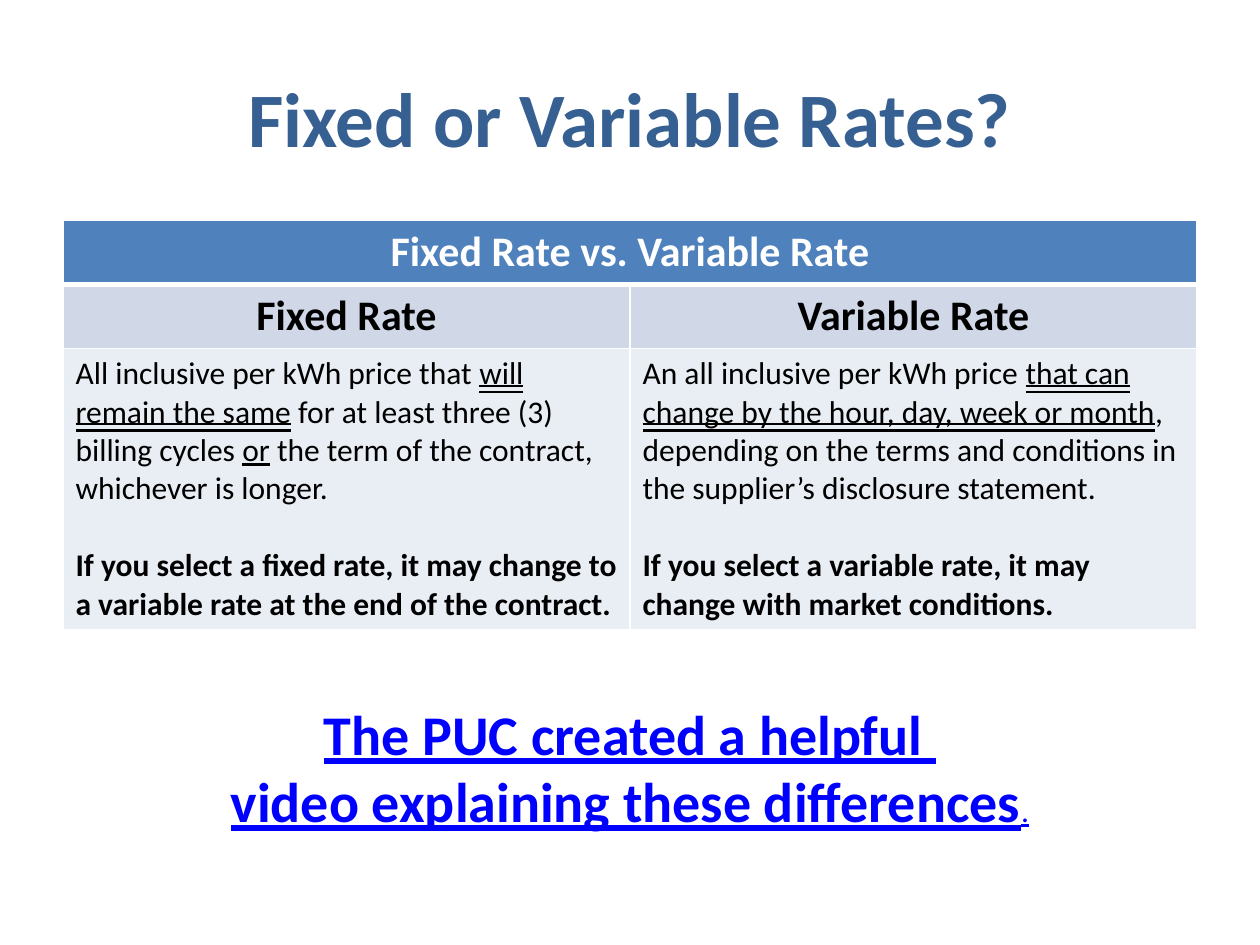
from dataclasses import dataclass

import lxml.etree
import pptx
import pptx.dml.color
import pptx.enum.text
import pptx.oxml.ns
import pptx.util

ALIGN = pptx.enum.text.PP_ALIGN
ANCHOR = pptx.enum.text.MSO_ANCHOR
UNDERLINE = pptx.enum.text.MSO_UNDERLINE

SLIDE_WIDTH, SLIDE_HEIGHT = 10, 7.5
MARGIN = 0.05  # share of the slide width
CONTENT = 1 - 2 * MARGIN


@dataclass(frozen=True)
class Theme:
    font: str = "Calibri"
    title: str = "376092"
    header: str = "4F81BD"
    subheader: str = "D0D8E8"
    body: str = "E9EDF4"
    white: str = "FFFFFF"
    black: str = "000000"
    link: str = "0000FF"
    title_size: int = 44
    link_size: int = 32
    heading_size: int = 24
    body_size: int = 18


THEME = Theme()


@dataclass(frozen=True)
class Span:
    text: str
    size: int = THEME.body_size
    color: str = THEME.black
    bold: bool = False
    underline: UNDERLINE = UNDERLINE.NONE


@dataclass(frozen=True)
class Rate:
    name: str
    definition: tuple[Span, ...]
    note: str


RATES = (
    Rate(
        "Fixed Rate",
        (
            Span("All inclusive per kWh price that "),
            Span("will remain the same", underline=UNDERLINE.DOUBLE_LINE),
            Span(" for at least three (3) billing cycles "),
            Span("or", underline=UNDERLINE.SINGLE_LINE),
            Span(" the term of the contract, whichever is longer."),
        ),
        "If you select a fixed rate, it may change to a variable rate at the end of the contract.",
    ),
    Rate(
        "Variable Rate",
        (
            Span("An all inclusive per kWh price "),
            Span("that can change by the hour, day, week or month", underline=UNDERLINE.DOUBLE_LINE),
            Span(", depending on the terms and conditions in the supplier’s disclosure statement."),
        ),
        "If you select a variable rate, it may change with market conditions.",
    ),
)


def across(share: float) -> int:
    return pptx.util.Inches(share * SLIDE_WIDTH)


def down(share: float) -> int:
    return pptx.util.Inches(share * SLIDE_HEIGHT)


def rgb(color: str) -> pptx.dml.color.RGBColor:
    return pptx.dml.color.RGBColor.from_string(color)


def write(frame, paragraphs, align=ALIGN.LEFT, gap: float = 0) -> None:
    """Fill a text frame with paragraphs of spans, with a gap in points between them."""
    for index, spans in enumerate(paragraphs):
        paragraph = frame.paragraphs[0] if index == 0 else frame.add_paragraph()
        paragraph.alignment = align
        paragraph.space_before = pptx.util.Pt(gap if index else 0)
        for span in spans:
            run = paragraph.add_run()
            run.text = span.text
            run.font.name = THEME.font
            run.font.size = pptx.util.Pt(span.size)
            run.font.bold = span.bold
            run.font.underline = span.underline
            run.font.color.rgb = rgb(span.color)


def set_borders(cell, top: int = 1, bottom: int = 1) -> None:
    properties = cell._tc.get_or_add_tcPr()
    widths = {"a:lnL": 1, "a:lnR": 1, "a:lnT": top, "a:lnB": bottom}
    for index, (tag, width) in enumerate(widths.items()):
        line = lxml.etree.Element(pptx.oxml.ns.qn(tag), w=str(pptx.util.Pt(width)))
        fill = lxml.etree.SubElement(line, pptx.oxml.ns.qn("a:solidFill"))
        lxml.etree.SubElement(fill, pptx.oxml.ns.qn("a:srgbClr"), val=THEME.white)
        properties.insert(index, line)


def add_title(page) -> None:
    title = page.shapes.title
    title.left, title.top = across(MARGIN), down(0.04)
    title.width, title.height = across(CONTENT), down(1 / 6)
    title.text_frame.vertical_anchor = ANCHOR.MIDDLE
    span = Span("Fixed or Variable Rates?", THEME.title_size, THEME.title, bold=True)
    write(title.text_frame, [[span]], ALIGN.CENTER)


def add_rate_table(page) -> None:
    heights = (0.5, 0.5, 2.22)
    table = page.shapes.add_table(
        len(heights), len(RATES), across(MARGIN), down(7 / 30),
        across(CONTENT), pptx.util.Inches(sum(heights)),
    ).table
    fills = (THEME.header, THEME.subheader, THEME.body)
    rules = (1, 3, 1, 1)
    for row, (height, color) in enumerate(zip(heights, fills)):
        table.rows[row].height = pptx.util.Inches(height)
        for cell in table.rows[row].cells:
            cell.fill.solid()
            cell.fill.fore_color.rgb = rgb(color)
            set_borders(cell, rules[row], rules[row + 1])

    header = table.cell(0, 0)
    header.merge(table.cell(0, len(RATES) - 1))
    caption = Span("Fixed Rate vs. Variable Rate", THEME.heading_size, THEME.white, bold=True)
    write(header.text_frame, [[caption]], ALIGN.CENTER)
    for column, rate in enumerate(RATES):
        name = Span(rate.name, THEME.heading_size, bold=True)
        write(table.cell(1, column).text_frame, [[name]], ALIGN.CENTER)
        note = Span(rate.note, bold=True)
        write(table.cell(2, column).text_frame, [rate.definition, [note]], gap=22)


def add_video_prompt(page) -> None:
    box = page.shapes.add_textbox(across(MARGIN), down(11 / 15), across(CONTENT), pptx.util.Inches(1.18))
    box.text_frame.word_wrap = True
    lines = ("The PUC created a helpful ", "video explaining these differences")
    paragraphs = [
        [Span(line, THEME.link_size, THEME.link, True, UNDERLINE.SINGLE_LINE)] for line in lines
    ]
    paragraphs[-1].append(Span(".", color=THEME.link, underline=UNDERLINE.SINGLE_LINE))
    write(box.text_frame, paragraphs, ALIGN.CENTER)


def main() -> None:
    deck = pptx.Presentation()
    deck.slide_width = pptx.util.Inches(SLIDE_WIDTH)
    deck.slide_height = pptx.util.Inches(SLIDE_HEIGHT)
    page = deck.slides.add_slide(deck.slide_layouts.get_by_name("Title Only"))
    add_title(page)
    add_rate_table(page)
    add_video_prompt(page)
    deck.save("out.pptx")


if __name__ == "__main__":
    main()
